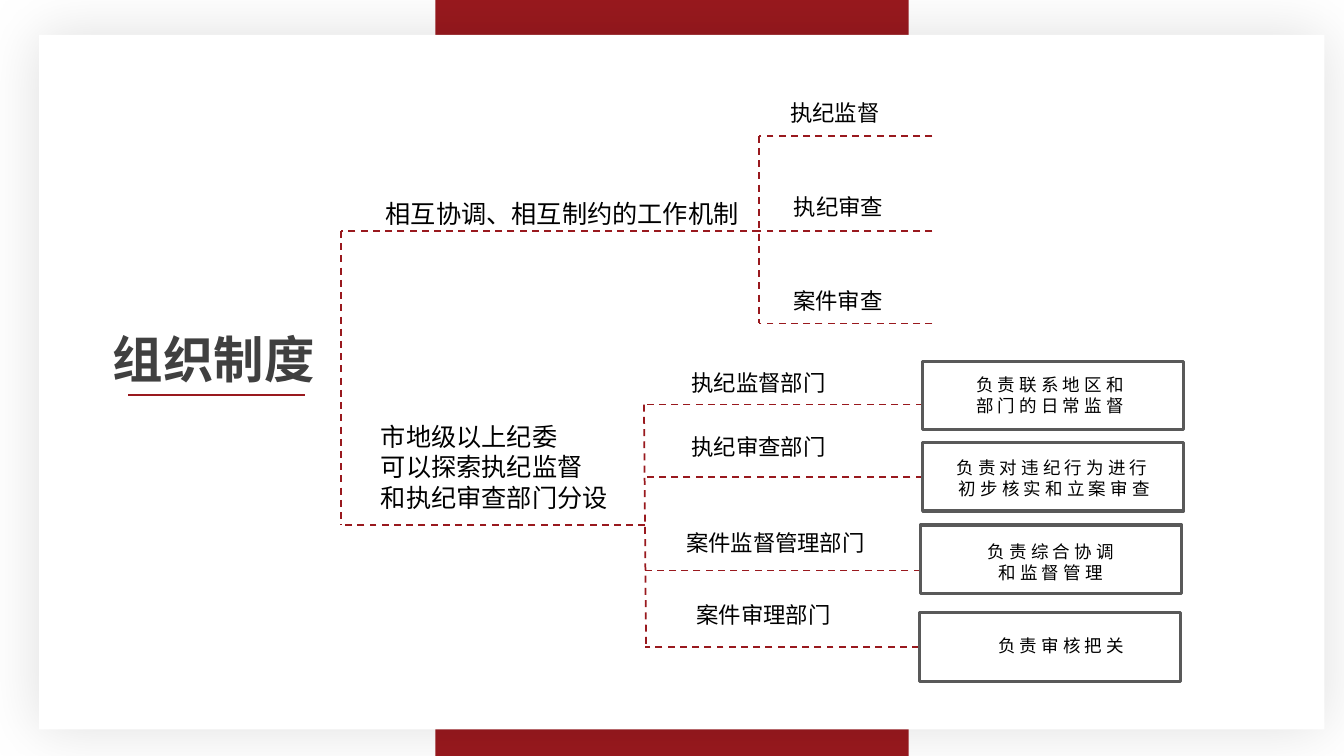
"""Build the slide showing the organisation system as a two-branch tree."""
from dataclasses import dataclass

import pptx
import pptx.dml.color
import pptx.enum.dml
import pptx.enum.shapes
import pptx.enum.text
import pptx.oxml
import pptx.util
from pptx.util import Pt

TITLE = ("组织制度", 73.5, 231, 210, 51)
HEADINGS = [
    (["相互协调、相互制约的工作机制"], 268.5, 138, 318, 29),
    (["市地级以上纪委", "可以探索执纪监督", "和执纪审查部门分设"], 265, 297.5, 186.5, 73),
]
MECHANISMS = [
    ("执纪监督", 557.5, 67, 100, 97),
    ("执纪审查", 560, 134.5, 97, 165),
    ("案件审查", 559.5, 201.5, 129, 231),
]
DEPARTMENTS = [
    ("执纪监督部门", 487, 260, 152.5, 289),
    ("执纪审查部门", 487, 306, 152.5, 340.5),
    ("案件监督管理部门", 483, 374.5, 186.5, 407.5),
    ("案件审理部门", 490.5, 426, 134, 462),
]
DUTIES = [
    (["负责联系地区和", "部门的日常监督"], (659, 258), (687, 263.5, 126, 37.5)),
    (["负责对违纪行为进行初步核实和立案审查"], (659, 316), (669.5, 322.5, 167, 37.5)),
    (["负责综合协调", "和监督管理"], (657.5, 375), (687.5, 383, 126, 37.5)),
    (["负责审核把关"], (656.5, 437.5), (695, 449.5, 126, 22.5)),
]
DUTY_SIZE = (186.5, 49)
ROOT_X, MECHANISM_X, DEPARTMENT_X = 243.5, 542, 461
MECHANISM_END = 666
UPPER_Y, LOWER_Y = 165, 375


@dataclass(frozen=True)
class Theme:
    """Colours, font and type sizes."""
    red: str = "99191E"
    white: str = "FFFFFF"
    grey: str = "595959"
    title: str = "404040"
    black: str = "000000"
    font: str = "Roboto Condensed"
    title_size: float = 36
    heading_size: float = 18
    branch_size: float = 16
    duty_size: float = 12.5


THEME = Theme()
ALIGN = pptx.enum.text.PP_ALIGN
ANCHOR = pptx.enum.text.MSO_ANCHOR
A_NS = "http://schemas.openxmlformats.org/drawingml/2006/main"


def rgb(colour):
    """Return a colour object."""
    return pptx.dml.color.RGBColor.from_string(colour)


def add_effects(shape, inner=""):
    """Give a shape its effect list."""
    shape._element.spPr.append(pptx.oxml.parse_xml(
        f'<a:effectLst xmlns:a="{A_NS}">{inner}</a:effectLst>'))


def add_rect(shapes, place, fill, outline=None):
    """Add a plain rectangle."""
    rect = shapes.add_shape(pptx.enum.shapes.MSO_SHAPE.RECTANGLE, *map(Pt, place))
    rect.fill.solid()
    rect.fill.fore_color.rgb = rgb(fill)
    if outline:
        rect.line.color.rgb = rgb(outline)
        rect.line.width = Pt(2.25)
    else:
        rect.line.fill.background()
    return rect


def add_line(shapes, start, end, width=1.25, dashed=True):
    """Add a red straight line."""
    line = shapes.add_connector(
        pptx.enum.shapes.MSO_CONNECTOR.STRAIGHT, *map(Pt, start + end))
    line.line.color.rgb = rgb(THEME.red)
    line.line.width = Pt(width)
    if dashed:
        line.line.dash_style = pptx.enum.dml.MSO_LINE.DASH
    add_effects(line)
    return line


def write(holder, lines, size, colour=THEME.black, bold=False,
          align=ALIGN.LEFT, anchor=ANCHOR.TOP, spacing=None):
    """Fill a text holder with formatted paragraphs."""
    frame = holder.text_frame
    frame.text = "\n".join(lines)
    frame.word_wrap = True
    frame.auto_size = pptx.enum.text.MSO_AUTO_SIZE.SHAPE_TO_FIT_TEXT
    frame.vertical_anchor = anchor
    for paragraph in frame.paragraphs:
        paragraph.alignment = align
        paragraph.font.name = THEME.font
        paragraph.font.size = Pt(size)
        paragraph.font.bold = bold
        paragraph.font.color.rgb = rgb(colour)
        if spacing:
            for run in paragraph.runs:
                run._r.get_or_add_rPr().set("spc", str(spacing * 100))


def add_text(shapes, lines, place, size, **style):
    """Add a text box."""
    write(shapes.add_textbox(*map(Pt, place)), lines, size, **style)


def add_backdrop(slide):
    """Add the red band, the card and the title."""
    add_rect(slide.shapes, (311, 0, 338, 540), THEME.red).shadow.inherit = False
    card = add_rect(slide.shapes, (28, 25, 918, 496), THEME.white)
    add_effects(card, f'<a:outerShdw blurRad="{Pt(44)}" dist="0" dir="0" algn="ctr" '
                      f'rotWithShape="0"><a:srgbClr val="{THEME.black}">'
                      '<a:alpha val="12000"/></a:srgbClr></a:outerShdw>')
    title = slide.shapes.title
    text, *place = TITLE
    title.left, title.top, title.width, title.height = map(Pt, place)
    write(title, [text], THEME.title_size, THEME.title, bold=True)
    card._element.addnext(title._element)
    add_line(slide.shapes, (91.5, 282), (218, 282), 1.75, dashed=False)


def add_duty(shapes, lines, corner, label_place):
    """Add an outlined box grouped with its label."""
    group = shapes.add_group_shape()
    box = add_rect(group.shapes, corner + DUTY_SIZE, THEME.white, THEME.grey)
    box.shadow.inherit = False
    add_text(group.shapes, lines, label_place, THEME.duty_size,
             align=ALIGN.CENTER, anchor=ANCHOR.MIDDLE, spacing=3)
    return box


def add_tree(shapes):
    """Add both branches with their leaves."""
    add_line(shapes, (ROOT_X, UPPER_Y), (ROOT_X, LOWER_Y))
    add_line(shapes, (MECHANISM_X, UPPER_Y), (ROOT_X, UPPER_Y))
    add_line(shapes, (DEPARTMENT_X, LOWER_Y), (ROOT_X, LOWER_Y))
    for lines, *place in HEADINGS:
        add_text(shapes, lines, place, THEME.heading_size)

    add_line(shapes, (MECHANISM_X, MECHANISMS[0][-1]), (MECHANISM_X, MECHANISMS[-1][-1]))
    add_line(shapes, (DEPARTMENT_X - 1, DEPARTMENTS[0][-1]),
             (DEPARTMENT_X + 0.5, DEPARTMENTS[-1][-1]))
    for name, left, top, width, y in MECHANISMS + DEPARTMENTS:
        add_text(shapes, [name], (left, top, width, 26.5), THEME.branch_size)
    for *_, y in MECHANISMS:
        add_line(shapes, (MECHANISM_END, y), (MECHANISM_X, y))
    for (*_, y), (lines, corner, label_place) in zip(DEPARTMENTS, DUTIES):
        branch = add_line(shapes, (corner[0], y), (DEPARTMENT_X, y))
        box = add_duty(shapes, lines, corner, label_place)
        if y == corner[1] + DUTY_SIZE[1] / 2:
            branch.begin_connect(box, 1)


def main():
    """Create and save the presentation."""
    deck = pptx.Presentation()
    deck.slide_width, deck.slide_height = Pt(960), Pt(540)
    slide = deck.slides.add_slide(deck.slide_layouts[5])
    add_backdrop(slide)
    add_tree(slide.shapes)
    deck.save("out.pptx")


if __name__ == "__main__":
    main()
